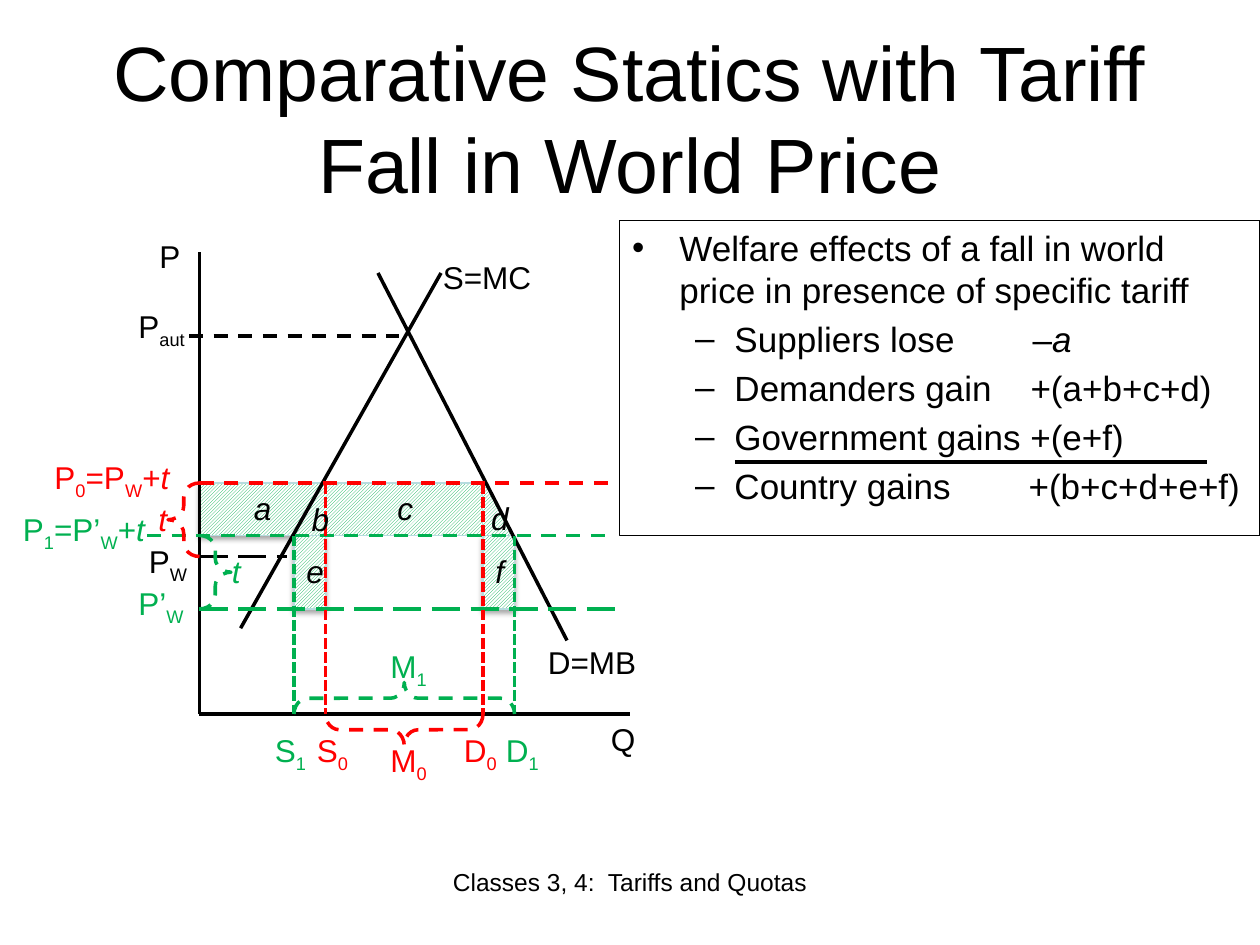
from lxml import etree
from pptx import Presentation
from pptx import util as u
from pptx.dml import color
from pptx.enum import dml, shapes, text
from pptx.oxml import ns, parse_xml

Pt = u.Pt
FONT = "Arial"
COLORS = {"black": "000000", "red": "FF0000", "green": "00B050",
          "white": "FFFFFF", "edge": "B6DCDF"}

# Content
TITLE = ["Comparative Statics with Tariff", "Fall in World Price"]
FOOTER = "Classes 3, 4:  Tariffs and Quotas"
HEADING = "Welfare effects of a fall in world price in presence of specific tariff"
# label, gap width before the value, value runs
EFFECTS = [
    ("Suppliers lose", 44.5, [("–", ""), ("a", "i")]),
    ("Demanders gain", 22.2, [("+(a+b+c+d)", "")]),
    ("Government gains", 5.6, [("+(e+f)", "")]),
    ("Country gains", 44.5, [("+(b+c+d+e+f)", "")]),
]

# Diagram coordinates: quantities run across, prices run down
ORIGIN_X, AXIS_Y = 114, 408
S1, S0, D0, D1 = 168, 186, 276, 294
P_AUT, P0, P1, PW, PW_NEW = 192, 276, 306, 318, 348
BRACE = 18

# shape, left, top, right, bottom, has edge, has shadow
AREAS = [
    ("RECTANGLE", S1, P1, S0, PW_NEW, True, True),
    ("RECTANGLE", D0, P1, D1, PW_NEW, True, True),
    ("RECTANGLE", ORIGIN_X, P0, S1, P1, True, True),
    ("RECTANGLE", ORIGIN_X, P0, D0, P1, True, False),
    ("RIGHT_TRIANGLE", D0, P0, D1, P1, False, False),
]

# start x, start y, end x, end y, colour, dash
LINES = [
    (ORIGIN_X, AXIS_Y, 360, AXIS_Y, "black", None),
    (ORIGIN_X, AXIS_Y, ORIGIN_X, 144, "black", None),
    (137.5, 359, 252, 156, "black", None),
    (324, 366, 216, 156, "black", None),
    (ORIGIN_X, PW, 164, PW, "black", "LONG_DASH"),
    (ORIGIN_X, P0, 348, P0, "red", "DASH"),
    (108, P_AUT, 228, P_AUT, "black", "DASH"),
    (ORIGIN_X, PW_NEW, 354, PW_NEW, "green", "LONG_DASH"),
    (84, P1, 348, P1, "green", "DASH"),
    (420, 264, 690, 264, "black", None),
]
LINES += [(x, P0, x, AXIS_Y, "red", "SQUARE_DOT") for x in (S0, D0)]
LINES += [(x, P1, x, AXIS_Y, "green", "SQUARE_DOT") for x in (S1, D1)]

# shape, centre x, centre y, span, rotation, colour
BRACES = [
    ("LEFT_BRACE", ORIGIN_X - BRACE / 2, (P0 + PW) / 2, PW - P0, 0, "red"),
    ("RIGHT_BRACE", ORIGIN_X + BRACE / 2, (P1 + PW_NEW) / 2, PW_NEW - P1, 0, "green"),
    ("LEFT_BRACE", (S0 + D0) / 2, AXIS_Y + BRACE / 2, D0 - S0, 270, "red"),
    ("LEFT_BRACE", (S1 + D1) / 2, AXIS_Y - BRACE / 2, D1 - S1, 90, "green"),
]

# left, top, width, colour, runs of (text, style)
LABELS = [
    (84, 132, 54, "black", [("P", "")]),
    (78, 306, 42, "black", [("P", ""), ("W", "sub")]),
    (342, 408, 54, "black", [("Q", "")]),
    (174, 414, 36, "red", [("S", ""), ("0", "sub")]),
    (258, 414, 36, "red", [("D", ""), ("0", "sub")]),
    (150, 414, 36, "green", [("S", ""), ("1", "sub")]),
    (282, 414, 36, "green", [("D", ""), ("1", "sub")]),
    (216, 366, 42, "green", [("M", ""), ("1", "sub")]),
    (216, 420, 42, "red", [("M", ""), ("0", "sub")]),
    (24, 258, 90, "red",
     [("P", ""), ("0", "sub"), ("=P", ""), ("W", "sub"), ("+", ""), ("t", "i")]),
    (6, 288, 90, "green",
     [("P", ""), ("1", "sub"), ("=P’", ""), ("W", "sub"), ("+", ""), ("t", "i")]),
    (72, 172, 54, "black", [("P", ""), ("aut", "sub")]),
    (72, 330, 42, "green", [("P’", ""), ("W", "sub")]),
    (246, 144, 73, "black", [("S=MC", "")]),
    (306, 364, 102, "black", [("D=MB", "")]),
]
# letter, left, top, width, colour
CENTERED = [
    ("t", 72, 282, 42, "red"), ("t", 114, 312, 42, "green"),
    ("a", 138, 276, 18, "black"), ("b", 171, 282, 18, "black"),
    ("c", 220, 276, 18, "black"), ("d", 273.5, 281.5, 18, "black"),
    ("e", 168, 312, 18, "black"), ("f", 276, 312, 18, "black"),
]

SHADOW = (f'<a:effectLst {ns.nsdecls("a")}><a:outerShdw blurRad="39370" dist="22860" '
          f'dir="5400000" rotWithShape="0"><a:srgbClr val="{COLORS["black"]}">'
          '<a:alpha val="35000"/></a:srgbClr></a:outerShdw></a:effectLst>')


def rgb(name):
    return color.RGBColor.from_string(COLORS[name])


def add_run(paragraph, content, size, color_name="black", style=""):
    run = paragraph.add_run()
    run.text = content
    run.font.name, run.font.size = FONT, Pt(size)
    run.font.color.rgb = rgb(color_name)
    if style == "i":
        run.font.italic = True
    elif style == "sub":
        run.font._element.set("baseline", "-25000")
    return run


def style_line(line, color_name, width=2, dash=None):
    line.color.rgb = rgb(color_name)
    line.width = Pt(width)
    if dash:
        line.dash_style = getattr(dml.MSO_LINE, dash)


def place(shape, left, top, width, height):
    shape.left, shape.top, shape.width, shape.height = map(Pt, (left, top, width, height))


def add_label(slide, left, top, width, color_name, runs, centered=False, size=18, height=29):
    box = slide.shapes.add_textbox(Pt(left), Pt(top), Pt(width), Pt(height))
    box.text_frame.word_wrap = True
    paragraph = box.text_frame.paragraphs[0]
    paragraph.alignment = text.PP_ALIGN.CENTER if centered else text.PP_ALIGN.LEFT
    for content, style in runs:
        add_run(paragraph, content, size, color_name, style)


def add_area(slide, kind, left, top, right, bottom, has_edge, has_shadow):
    area = slide.shapes.add_shape(getattr(shapes.MSO_SHAPE, kind), Pt(left), Pt(top),
                                  Pt(right - left), Pt(bottom - top))
    area.fill.patterned()
    area.fill.pattern = dml.MSO_PATTERN.DARK_UPWARD_DIAGONAL
    area.fill.fore_color.rgb, area.fill.back_color.rgb = rgb("green"), rgb("white")
    if has_edge:
        style_line(area.line, "edge", 0.75)
    else:
        area.line.fill.background()
    if has_shadow:
        area._element.spPr.append(parse_xml(SHADOW))
    else:
        area.shadow.inherit = False


def add_line(slide, x1, y1, x2, y2, color_name, dash):
    line = slide.shapes.add_connector(shapes.MSO_CONNECTOR.STRAIGHT,
                                      Pt(x1), Pt(y1), Pt(x2), Pt(y2))
    style_line(line.line, color_name, dash=dash)
    etree.SubElement(line._element.spPr, ns.qn("a:effectLst"))


def add_brace(slide, kind, center_x, center_y, span, rotation, color_name):
    brace = slide.shapes.add_shape(getattr(shapes.MSO_SHAPE, kind), Pt(center_x - BRACE / 2),
                                   Pt(center_y - span / 2), Pt(BRACE), Pt(span))
    brace.adjustments[0] = 0.44
    brace.rotation = rotation
    brace.fill.background()
    brace.shadow.inherit = False
    style_line(brace.line, color_name, dash="DASH")


def fill_title(title):
    place(title, 36, 21.6, 648, 90)
    frame = title.text_frame
    frame.auto_size = text.MSO_AUTO_SIZE.NONE
    frame.vertical_anchor = text.MSO_ANCHOR.MIDDLE
    paragraph = frame.paragraphs[0]
    paragraph.alignment = text.PP_ALIGN.CENTER
    for index, line in enumerate(TITLE):
        if index:
            paragraph.add_line_break()
        add_run(paragraph, line, 44)


def format_item(paragraph, level, margin, hanging):
    paragraph.level = level
    paragraph.space_before = Pt(4)
    properties = paragraph._p.get_or_add_pPr()
    properties.set("marL", str(Pt(margin)))
    properties.set("indent", str(Pt(-hanging)))


def fill_body(body):
    place(body, 354, 126, 366, 180)
    style_line(body.line, "black", 0.75)
    frame = body.text_frame
    frame.auto_size = text.MSO_AUTO_SIZE.NONE
    heading = frame.paragraphs[0]
    format_item(heading, 0, 27, 27)
    add_run(heading, HEADING, 20)
    for label, gap, value in EFFECTS:
        paragraph = frame.add_paragraph()
        format_item(paragraph, 1, 58.5, 22.5)
        add_run(paragraph, label, 20)
        # one space, widened so that the values line up
        space = add_run(paragraph, " ", 20)
        space.font._element.set("spc", str(round((gap - 5.6) * 100)))
        for content, style in value:
            add_run(paragraph, content, 20, style=style)


def main():
    presentation = Presentation()
    presentation.slide_width, presentation.slide_height = Pt(720), Pt(540)
    slide = presentation.slides.add_slide(presentation.slide_layouts[1])
    fill_title(slide.shapes.title)
    fill_body(slide.placeholders[1])
    # Diagram, back to front
    for add, rows in ((add_area, AREAS), (add_line, LINES),
                      (add_brace, BRACES), (add_label, LABELS)):
        for row in rows:
            add(slide, *row)
    for letter, left, top, width, color_name in CENTERED:
        add_label(slide, left, top, width, color_name, [(letter, "i")], centered=True)
    # Footer
    add_label(slide, 246, 492, 228, "black", [(FOOTER, "")], True, 14, 37.5)
    presentation.save("out.pptx")


if __name__ == "__main__":
    main()
